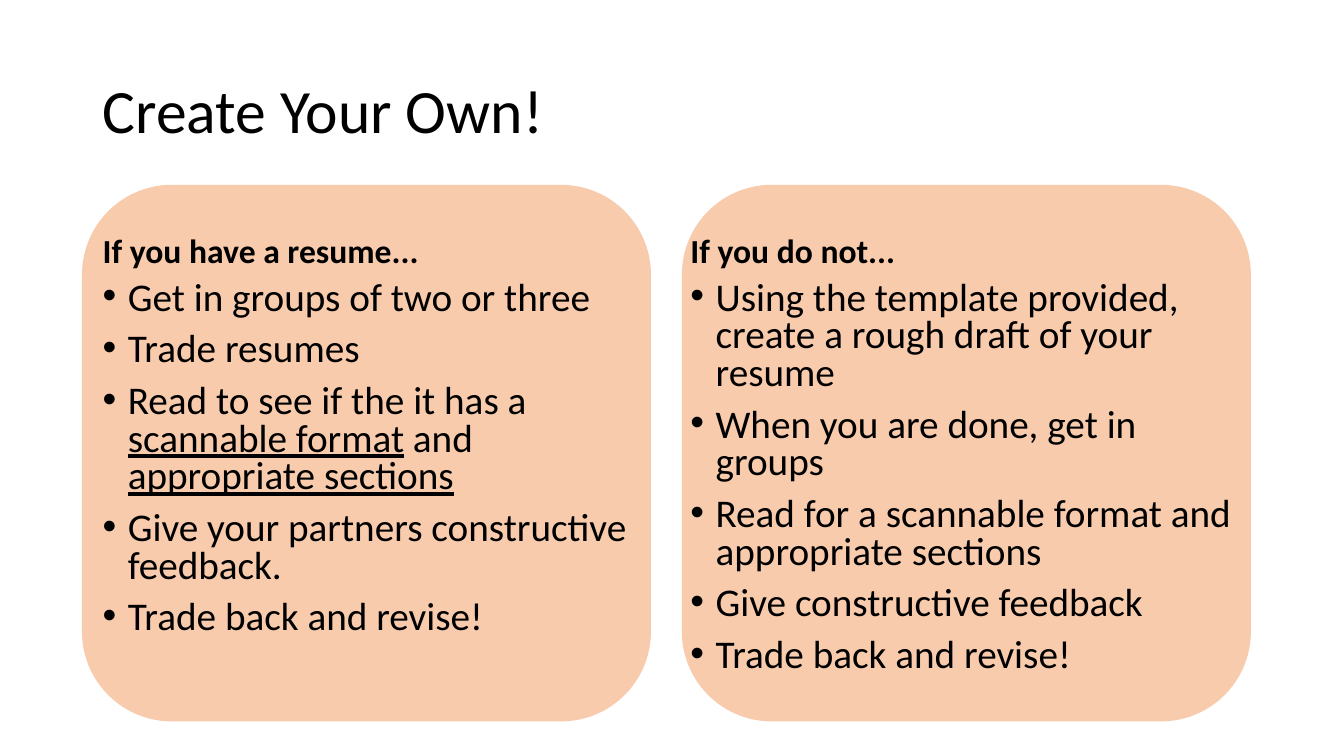
"""Build the "Create Your Own!" slide with two instruction panels."""
from dataclasses import dataclass

from lxml import etree
from pptx import Presentation
from pptx.dml.color import RGBColor
from pptx.enum.shapes import MSO_SHAPE
from pptx.enum.text import MSO_ANCHOR
from pptx.oxml.ns import qn
from pptx.util import Inches, Pt

ROUNDED = MSO_SHAPE.ROUNDED_RECTANGLE
TOP, MIDDLE, BOTTOM = MSO_ANCHOR.TOP, MSO_ANCHOR.MIDDLE, MSO_ANCHOR.BOTTOM


@dataclass(frozen=True)
class Theme:
    """Colours, font and type sizes of the slide."""
    font: str = "Calibri"
    ink: RGBColor = RGBColor(0x00, 0x00, 0x00)
    panel: RGBColor = RGBColor(0xF8, 0xCB, 0xAD)
    title: int = 44
    heading: int = 24
    body: int = 28


THEME = Theme()
PANEL_TOP, PANEL_WIDTH, PANEL_HEIGHT = 1.84, 5.63, 5.31
HEADING_HEIGHT, LIST_HEIGHT = 0.9, 4.03
BULLET_INDENT = 0.25

COLUMNS = [
    {
        "panel_left": 0.82, "text_left": 0.92, "text_width": 5.64,
        "heading": "If you have a resume...",
        "steps": [
            [("Get in groups of two or three", False)],
            [("Trade resumes", False)],
            [("Read to see if the it has a ", False), ("scannable format", True),
             (" and ", False), ("appropriate sections", True)],
            [("Give your partners constructive feedback.", False)],
            [("Trade back and revise!", False)],
        ],
    },
    {
        "panel_left": 6.77, "text_left": 6.75, "text_width": 5.67,
        "heading": "If you do not...",
        "steps": [
            [("Using the template provided, create a rough draft of your resume", False)],
            [("When you are done, get in groups", False)],
            [("Read for a scannable format and appropriate sections", False)],
            [("Give constructive feedback", False)],
            [("Trade back and revise!", False)],
        ],
    },
]


def apply_format(target, values):
    """Set each named attribute on the target."""
    for name, value in values.items():
        setattr(target, name, value)


def add_panel(page, left):
    """Draw one rounded background panel."""
    panel = page.shapes.add_shape(ROUNDED, Inches(left), Inches(PANEL_TOP),
                                  Inches(PANEL_WIDTH), Inches(PANEL_HEIGHT))
    panel.shadow.inherit = False
    panel.fill.solid()
    panel.fill.fore_color.rgb = THEME.panel
    panel.line.color.rgb = THEME.panel
    panel.line.width = Pt(1)


def add_bullet(para):
    """Give a paragraph a hanging round bullet."""
    properties = para._p.get_or_add_pPr()
    indent = Inches(BULLET_INDENT)
    properties.set("marL", str(indent))
    properties.set("indent", str(-indent))
    font = etree.SubElement(properties, qn("a:buFont"))
    font.set("typeface", "Arial")
    etree.SubElement(properties, qn("a:buChar")).set("char", "•")


def add_text(page, place, paragraphs, size, anchor=TOP, spacing=0.9,
             bold=False, bulleted=False):
    """Add a wrapped text box from paragraphs of (text, underlined) spans."""
    box = page.shapes.add_textbox(*map(Inches, place))
    frame = box.text_frame
    apply_format(frame, {"word_wrap": True, "vertical_anchor": anchor})
    for index, spans in enumerate(paragraphs):
        para = frame.add_paragraph() if index else frame.paragraphs[0]
        if bulleted:
            add_bullet(para)
        apply_format(para, {"line_spacing": spacing,
                            "space_before": Pt(10 if index else 0)})
        for text, underlined in spans:
            span = para.add_run()
            span.text = text
            apply_format(span.font, {"name": THEME.font, "size": Pt(size),
                                     "bold": bold, "underline": underlined})
            span.font.color.rgb = THEME.ink


def add_column(page, column):
    """Add the heading and the bulleted steps of one column."""
    left, width = column["text_left"], column["text_width"]
    add_text(page, (left, PANEL_TOP, width, HEADING_HEIGHT),
             [[(column["heading"], False)]], THEME.heading, BOTTOM, bold=True)
    add_text(page, (left, PANEL_TOP + HEADING_HEIGHT, width, LIST_HEIGHT),
             column["steps"], THEME.body, spacing=0.8, bulleted=True)


def main():
    """Build and save the deck."""
    deck = Presentation()
    apply_format(deck, {"slide_width": Inches(13.33), "slide_height": Inches(7.5)})
    page = deck.slides.add_slide(deck.slide_layouts[6])
    for column in COLUMNS:
        add_panel(page, column["panel_left"])
    add_text(page, (0.92, 0.4, 11.5, 1.45), [[("Create Your Own!", False)]],
             THEME.title, MIDDLE)
    for column in COLUMNS:
        add_column(page, column)
    deck.save("out.pptx")


if __name__ == "__main__":
    main()
